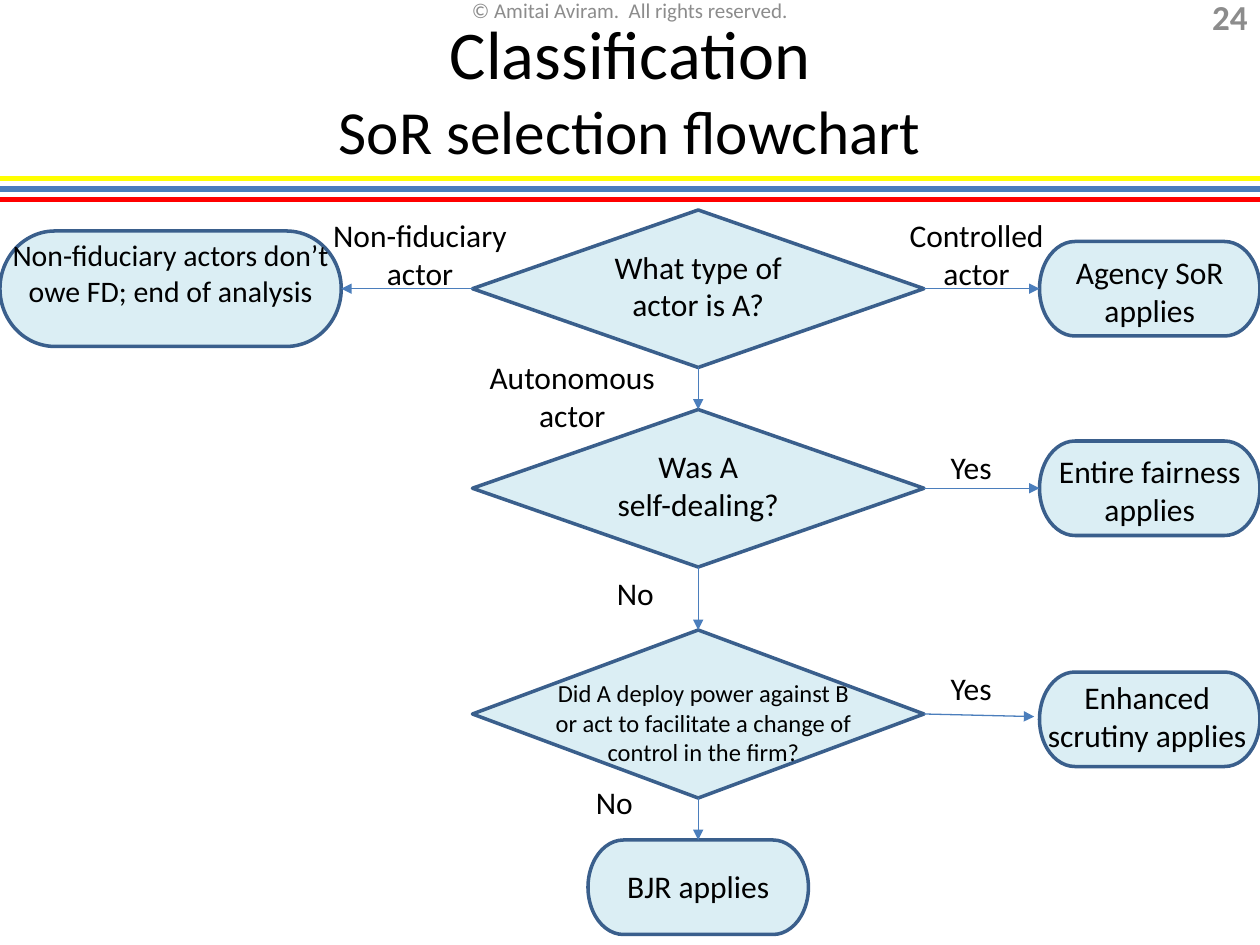
import pptx
import pptx.util
import pptx.dml.color
import pptx.enum.shapes
import pptx.enum.text
import pptx.oxml.ns
import lxml.etree

RGBColor = pptx.dml.color.RGBColor
YELLOW = RGBColor(0xFF, 0xFF, 0x00)
BLUE = RGBColor(0x4B, 0x7E, 0xBC)
RED = RGBColor(0xFF, 0x00, 0x00)
PALE = RGBColor(0xDB, 0xEE, 0xF4)
NAVY = RGBColor(0x3A, 0x5F, 0x8C)
BLACK = RGBColor(0x00, 0x00, 0x00)
GREY = RGBColor(0x8C, 0x8C, 0x8C)

ALIGN = pptx.enum.text.PP_ALIGN
ANCHOR = pptx.enum.text.MSO_ANCHOR
SHAPE = pptx.enum.shapes.MSO_SHAPE
TOP, LEFT, BOTTOM, RIGHT = range(4)
PX_PER_INCH = 120


def px(*lengths):
    return [pptx.util.Inches(length / PX_PER_INCH) for length in lengths]


class Flowchart:
    font = "Calibri"

    def __init__(self, page):
        self.page = page

    def set_lines(self, frame, lines, sizes, color=BLACK, align=ALIGN.CENTER,
                  anchor=ANCHOR.TOP, bold=False):
        layout = {"word_wrap": True, "vertical_anchor": anchor,
                  "auto_size": pptx.enum.text.MSO_AUTO_SIZE.NONE}
        for name, value in layout.items():
            setattr(frame, name, value)
        para = frame.paragraphs[0]
        para.alignment = align
        for index, (line, size) in enumerate(zip(lines, sizes)):
            if index:
                para.add_line_break()
            span = para.add_run()
            span.text = line
            style = {"name": self.font, "size": pptx.util.Pt(size), "bold": bold}
            for name, value in style.items():
                setattr(span.font, name, value)
            span.font.color.rgb = color

    def title(self, at, lines, sizes):
        box = self.page.shapes.title
        for name, value in zip(("left", "top", "width", "height"), px(*at)):
            setattr(box, name, value)
        self.set_lines(box.text_frame, lines, sizes, anchor=ANCHOR.MIDDLE)

    def text(self, at, content, size=18, **style):
        box = self.page.shapes.add_textbox(*px(*at))
        lines = content.split("\n")
        self.set_lines(box.text_frame, lines, [size] * len(lines), **style)
        return box

    def node(self, kind, at):
        box = self.page.shapes.add_shape(kind, *px(*at))
        box.shadow.inherit = False
        box.fill.solid()
        box.fill.fore_color.rgb = PALE
        box.line.color.rgb = NAVY
        box.line.width = pptx.util.Pt(2)
        return box

    def decision(self, top, height=150):
        return self.node(SHAPE.FLOWCHART_DECISION, (450, top, 430, height))

    def outcome(self, left, top, width=210, height=90):
        return self.node(SHAPE.FLOWCHART_TERMINATOR, (left, top, width, height))

    def line(self, ends, color, width):
        line = self.page.shapes.add_connector(
            pptx.enum.shapes.MSO_CONNECTOR.STRAIGHT, *px(*ends))
        line.line.color.rgb = color
        line.line.width = pptx.util.Pt(width)
        lxml.etree.SubElement(line._element.spPr, pptx.oxml.ns.qn("a:effectLst"))
        return line

    def arrow(self, source, source_side, target, target_side):
        arrow = self.line((0, 0, 0, 0), BLUE, 0.75)
        arrow.begin_connect(source, source_side)
        arrow.end_connect(target, target_side)
        lxml.etree.SubElement(arrow.line._get_or_add_ln(),
                              pptx.oxml.ns.qn("a:tailEnd"), type="triangle")


def main():
    deck = pptx.Presentation()
    deck.slide_width, deck.slide_height = px(1200, 900)
    chart = Flowchart(deck.slides.add_slide(deck.slide_layouts[5]))

    for y, color in ((180, BLUE), (190, RED), (170, YELLOW)):
        chart.line((0, y, 1200, y), color, 3)
    chart.text((410, 0, 380, 20), "© Amitai Aviram.  All rights reserved.", 12,
               color=GREY, anchor=ANCHOR.MIDDLE)
    chart.text((1120, 1, 80, 29), "24", 20, color=GREY, align=ALIGN.RIGHT,
               anchor=ANCHOR.MIDDLE, bold=True)
    chart.title((0, 0, 1200, 170),
                ("Classification", "SoR selection flowchart"), (39, 35))

    actor_type = chart.decision(200)
    self_dealing = chart.decision(390)
    power = chart.decision(600, 160)
    no_duty = chart.outcome(0, 220, 325, 110)
    agency = chart.outcome(990, 230)
    fairness = chart.outcome(990, 420)
    chart.outcome(990, 640)
    judgment = chart.outcome(560, 800)

    labels = (
        ((540, 230, 250, 85), "What type of actor is A?"),
        ((540, 420, 250, 85), "Was A\nself-dealing?"),
        ((990, 235, 210, 85), "Agency SoR applies"),
        ((990, 425, 210, 85), "Entire fairness applies"),
        ((560, 820, 210, 48), "BJR applies"),
        ((300, 200, 200, 85), "Non-fiduciary actor"),
        ((850, 200, 160, 85), "Controlled actor"),
        ((450, 335, 190, 85), "Autonomous actor"),
        ((860, 421, 130, 48), "Yes"),
        ((860, 631, 130, 48), "Yes"),
        ((540, 541, 130, 48), "No"),
        ((520, 740, 130, 48), "No"),
    )
    for at, content in labels:
        chart.text(at, content)
    chart.text((0, 220, 325, 115),
               "Non-fiduciary actors don’t owe FD; end of analysis", 17)
    chart.text((510, 640, 320, 97), "Did A deploy power against B or act to "
               "facilitate a change of control in the firm?", 14)
    scrutiny = chart.text((985, 640, 215, 85), "Enhanced scrutiny applies")

    chart.arrow(actor_type, LEFT, no_duty, RIGHT)
    for source, target in ((actor_type, agency), (self_dealing, fairness),
                           (power, scrutiny)):
        chart.arrow(source, RIGHT, target, LEFT)
    for source, target in ((actor_type, self_dealing), (self_dealing, power),
                           (power, judgment)):
        chart.arrow(source, BOTTOM, target, TOP)

    deck.save("out.pptx")


if __name__ == "__main__":
    main()
